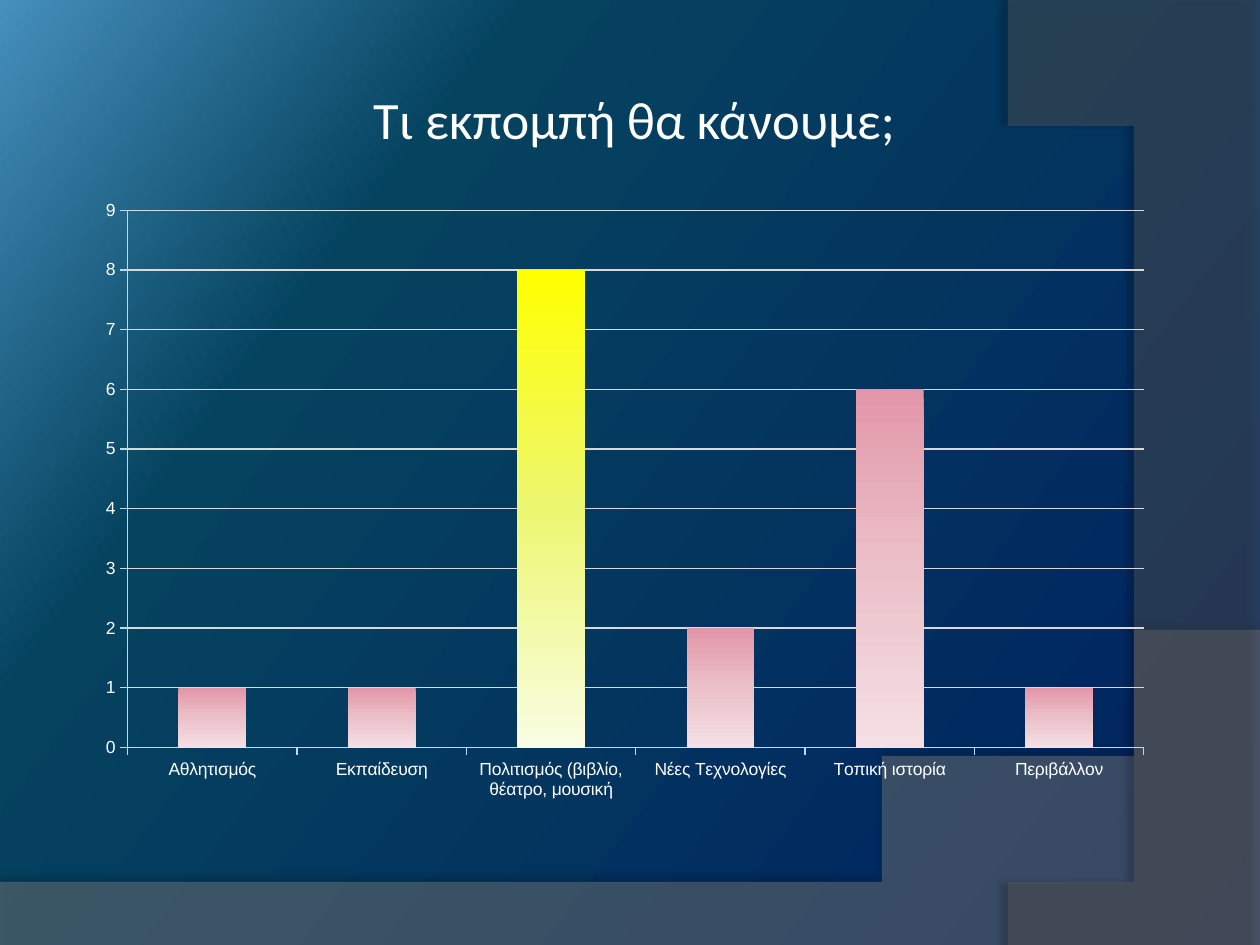
from lxml import etree
from pptx import Presentation
from pptx.chart.data import CategoryChartData
from pptx.dml.color import RGBColor
from pptx.enum.chart import XL_CHART_TYPE as ChartType, XL_TICK_MARK as TickMark
from pptx.enum.text import MSO_ANCHOR as Anchor, MSO_AUTO_SIZE as AutoSize, PP_ALIGN as Align
from pptx.oxml import parse_xml
from pptx.oxml.ns import nsdecls, qn
from pptx.util import Inches, Pt

TOPICS = {
    "Αθλητισμός": 1,
    "Εκπαίδευση": 1,
    "Πολιτισμός (βιβλίο, θέατρο, μουσική": 8,
    "Νέες Τεχνολογίες": 2,
    "Τοπική ιστορία": 6,
    "Περιβάλλον": 1,
}
WINNER = 2
BACKDROP = [(0, "002060"), (73, "05435F"), (100, "468FBC")]
PINK = [(0, "E296A8"), (50, "EBC0C9"), (100, "F5E0E5")]
YELLOW = [(0, "FFFF00"), (50, "EDF771"), (100, "F9FDE3")]


def rgb(value):
    return RGBColor.from_string(value)


def set_gradient(properties, stops, angle):
    stop_list = "".join(
        f'<a:gs pos="{position * 1000}"><a:srgbClr val="{value}"/></a:gs>'
        for position, value in stops
    )
    gradient = parse_xml(
        f'<a:gradFill {nsdecls("a")} rotWithShape="1"><a:gsLst>{stop_list}</a:gsLst>'
        f'<a:lin ang="{angle * 60000}" scaled="0"/></a:gradFill>'
    )
    properties.replace(properties.find(qn("a:solidFill")), gradient)


def curve(start, first, second, end, steps=48):
    points = []
    for step in range(1, steps + 1):
        t = step / steps
        weights = ((1 - t) ** 3, 3 * t * (1 - t) ** 2, 3 * t * t * (1 - t), t ** 3)
        points.append(tuple(
            sum(weight * value for weight, value in zip(weights, values))
            for values in zip(start, first, second, end)
        ))
    return points


def add_wave(slide, outline, color, opacity, shadow_opacity, distance, direction):
    builder = slide.shapes.build_freeform(*outline[0], scale=Inches(1))
    builder.add_line_segments(outline[1:], close=True)
    wave = builder.convert_to_shape()
    wave.fill.solid()
    wave.fill.fore_color.rgb = rgb(color)
    wave.line.fill.background()
    properties = wave.element.spPr
    fill_color = properties.find(qn("a:solidFill"))[0]
    etree.SubElement(fill_color, qn("a:alpha"), val=str(opacity * 1000))
    properties.append(parse_xml(
        f'<a:effectLst {nsdecls("a")}><a:outerShdw blurRad="{Pt(4)}" dist="{Pt(distance)}" '
        f'dir="{direction * 60000}" algn="ctr" rotWithShape="0"><a:srgbClr val="000000">'
        f'<a:alpha val="{shadow_opacity * 1000}"/></a:srgbClr></a:outerShdw></a:effectLst>'
    ))


def place_title(slide, text):
    title = slide.shapes.title
    title.left, title.top, title.width, title.height = map(Inches, (0.5, 0.6, 9.07, 6.1))
    frame = title.text_frame
    frame.text = text
    frame.auto_size = AutoSize.NONE
    frame.vertical_anchor = Anchor.TOP
    frame.margin_top = Inches(0.09)
    paragraph = frame.paragraphs[0]
    paragraph.alignment = Align.CENTER
    paragraph.font.name = "Calibri"
    paragraph.font.size = Pt(30)
    paragraph.font.color.rgb = rgb("FFFFFF")
    title.element.getparent().append(title.element)


def style_axis(axis):
    axis.major_tick_mark = TickMark.OUTSIDE
    axis.minor_tick_mark = TickMark.NONE
    axis.format.line.color.rgb = rgb("B5DDEE")
    axis.format.line.width = Pt(0.75)


def set_plot_area(chart, **fractions):
    plot_area = chart.element.find(".//" + qn("c:plotArea"))
    for layout in plot_area.findall(qn("c:layout")):
        plot_area.remove(layout)
    sizes = "".join(f'<c:{key} val="{value}"/>' for key, value in fractions.items())
    plot_area.insert(0, parse_xml(
        f'<c:layout {nsdecls("c")}><c:manualLayout><c:layoutTarget val="inner"/>'
        f'<c:xMode val="edge"/><c:yMode val="edge"/>{sizes}</c:manualLayout></c:layout>'
    ))


def add_vote_chart(slide):
    votes = CategoryChartData()
    votes.categories = list(TOPICS)
    votes.add_series("Series 1", list(TOPICS.values()))
    frame = slide.shapes.add_chart(
        ChartType.COLUMN_CLUSTERED, Inches(0.67), Inches(1.47), Inches(8.58), Inches(4.96), votes
    )
    chart = frame.chart
    chart.has_legend = False
    chart.has_title = False
    chart.font.name = "Arial"
    chart.font.size = Pt(10)
    chart.font.color.rgb = rgb("FFFFFF")
    style_axis(chart.category_axis)
    value_axis = chart.value_axis
    style_axis(value_axis)
    value_axis.minimum_scale, value_axis.maximum_scale, value_axis.major_unit = 0, 9, 1
    value_axis.has_major_gridlines = True
    value_axis.major_gridlines.format.line.color.rgb = rgb("D9D9D9")
    value_axis.major_gridlines.format.line.width = Pt(0.75)

    plot = chart.plots[0]
    plot.gap_width = 150
    plot.vary_by_categories = False
    series = plot.series[0]
    series.invert_if_negative = False
    for columns in (series, series.points[WINNER]):
        columns.format.fill.solid()
        columns.format.line.fill.background()
    set_gradient(chart.element.xpath(".//c:ser/c:spPr")[0], PINK, 90)
    set_gradient(chart.element.xpath(".//c:dPt/c:spPr")[0], YELLOW, 90)
    set_plot_area(chart, x=0.04, y=0.04, w=0.94, h=0.86)


def main():
    deck = Presentation()
    deck.slide_width, deck.slide_height = Inches(10), Inches(7.5)
    slide = deck.slides.add_slide(deck.slide_layouts[5])
    slide.background.fill.solid()
    set_gradient(slide.element.find(".//" + qn("p:bgPr")), BACKDROP, 217)

    lower = [(0, 7.05), (0, 7.51), (10, 7.51), (10, 5.2)]
    lower += curve(lower[-1], (5.59, 7.29), (3.91, 7.19), lower[0])
    add_wave(slide, lower, "7F7F7F", 45, 35, 3.5, 270)
    right = [(10, 0.02), (10, 7.5), (8.21, 7.5)]
    right += curve(right[-1], (9.35, 6.19), (10.18, 3), (8, 0))
    add_wave(slide, right, "5E5E5E", 40, 45, 4, 180)

    place_title(slide, "Τι εκπομπή θα κάνουμε;")
    add_vote_chart(slide)
    deck.save("out.pptx")


if __name__ == "__main__":
    main()
